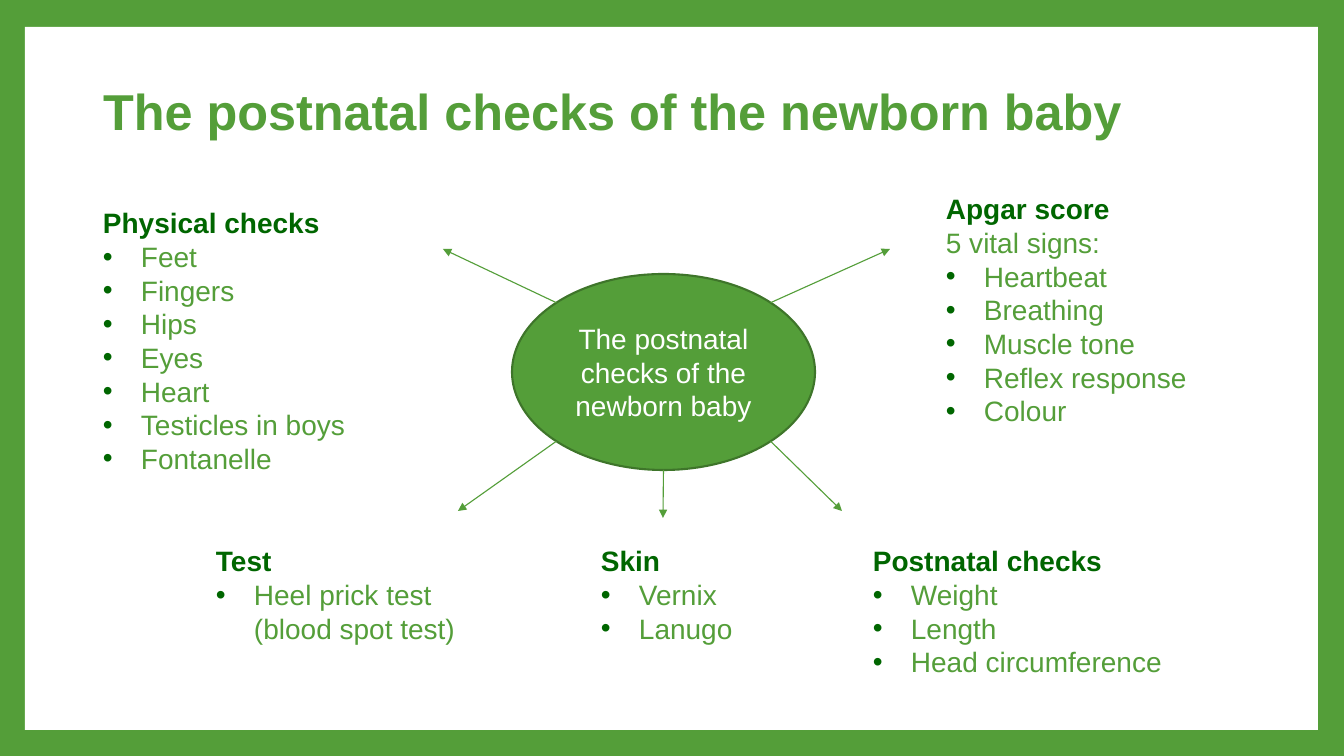
import pptx
import pptx.util
import pptx.dml.color
import pptx.enum.shapes
import pptx.enum.text
import pptx.oxml
import pptx.oxml.ns
import math

GREEN, DARK_GREEN, OUTLINE, WHITE = "549E39", "006600", "3E752A", "FFFFFF"
FONT = "Arial"
TOPIC = "The postnatal checks of the newborn baby"

# Content: heading, plain lines, bulleted lines, box (left, top, width, height) in px
GROUPS = [
    ("Apgar score", ["5 vital signs:"],
     ["Heartbeat", "Breathing", "Muscle tone", "Reflex response", "Colour"],
     (936, 187, 269, 248)),
    ("Skin", [], ["Vernix", "Lanugo"], (591, 539, 163, 146)),
    ("Postnatal checks", [], ["Weight", "Length", "Head circumference"],
     (863, 539, 342, 146)),
    ("Physical checks", [],
     ["Feet", "Fingers", "Hips", "Eyes", "Heart", "Testicles in boys", "Fontanelle"],
     (93, 201, 403, 281)),
    ("Test", [], ["Heel prick test (blood spot test)"], (206, 539, 276, 146)),
]
PANEL = (25, 27, 1293, 703)
TITLE = (93, 41, 1109, 146)
HUB = (512, 274, 303, 196)
# Angle on the hub's outline (degrees, clockwise from the right) and arrow tip
ARROWS = [(-45, (890, 249)), (45, (842, 511)), (-135, (443, 249)),
          (135, (458, 511)), (90, (663, 518))]
INDENT = 38


def px(length):
    return pptx.util.Emu(round(length * 914400 / 100.8))


def color(value):
    return pptx.dml.color.RGBColor.from_string(value)


def paint(shape, fill, line=None):
    shape.shadow.inherit = False
    shape.fill.solid()
    shape.fill.fore_color.rgb = color(fill)
    if line:
        shape.line.color.rgb = color(line)
        shape.line.width = pptx.util.Pt(1.5)
    else:
        shape.line.fill.background()


def style(para, size, value, bold=False):
    para.font.name = FONT
    para.font.size = pptx.util.Pt(size)
    para.font.bold = bold
    para.font.color.rgb = color(value)


def add_xml(parent, xml):
    namespace = pptx.oxml.ns.nsdecls("a")
    parent.append(pptx.oxml.parse_xml(xml.replace("/>", f" {namespace}/>", 1)
                                      if xml.count("<") == 1
                                      else xml.replace(">", f" {namespace}>", 1)))


def add_bullet(para):
    properties = para._p.get_or_add_pPr()
    properties.set("marL", str(px(INDENT)))
    properties.set("indent", str(-px(INDENT)))
    add_xml(properties, f'<a:buClr><a:srgbClr val="{DARK_GREEN}"/></a:buClr>')
    add_xml(properties, f'<a:buFont typeface="{FONT}"/>')
    add_xml(properties, '<a:buChar char="•"/>')


def add_group(page, heading, plain, bulleted, place):
    box = page.shapes.add_textbox(*map(px, place))
    frame = box.text_frame
    frame.word_wrap = True
    lines = [heading] + plain + bulleted
    for number, line in enumerate(lines):
        para = frame.paragraphs[0] if number == 0 else frame.add_paragraph()
        para.text = line
        if number > len(plain):
            add_bullet(para)
        style(para, 20, GREEN if number else DARK_GREEN, bold=number == 0)


def add_arrow(page, angle, tip):
    left, top, width, height = HUB
    turn = math.radians(angle)
    start = (left + width / 2 * (1 + math.cos(turn)),
             top + height / 2 * (1 + math.sin(turn)))
    arrow = page.shapes.add_connector(
        pptx.enum.shapes.MSO_CONNECTOR.STRAIGHT, *map(px, start + tip))
    arrow.line.color.rgb = color(GREEN)
    arrow.line.width = pptx.util.Pt(0.79)
    add_xml(arrow.line._get_or_add_ln(), '<a:tailEnd type="triangle"/>')
    add_xml(arrow._element.spPr, "<a:effectLst/>")


def main():
    deck = pptx.Presentation()
    deck.slide_width, deck.slide_height = px(1344), px(756)
    page = deck.slides.add_slide(deck.slide_layouts[5])
    shapes = pptx.enum.shapes.MSO_SHAPE

    # Green frame around a white panel
    page.background.fill.solid()
    page.background.fill.fore_color.rgb = color(GREEN)
    panel = page.shapes.add_shape(shapes.RECTANGLE, *map(px, PANEL))
    paint(panel, WHITE)
    page.shapes._spTree.insert(2, panel._element)

    # Title
    title = page.shapes.title
    title.left, title.top, title.width, title.height = map(px, TITLE)
    title.text_frame.text = TOPIC
    title.text_frame.auto_size = pptx.enum.text.MSO_AUTO_SIZE.NONE
    title.text_frame.vertical_anchor = pptx.enum.text.MSO_ANCHOR.MIDDLE
    para = title.text_frame.paragraphs[0]
    para.alignment = pptx.enum.text.PP_ALIGN.LEFT
    para.line_spacing = 0.9
    style(para, 36, GREEN, bold=True)

    # Central topic
    hub = page.shapes.add_shape(shapes.OVAL, *map(px, HUB))
    paint(hub, GREEN, OUTLINE)
    hub.text_frame.text = TOPIC
    hub.text_frame.word_wrap = True
    hub.text_frame.vertical_anchor = pptx.enum.text.MSO_ANCHOR.MIDDLE
    para = hub.text_frame.paragraphs[0]
    para.alignment = pptx.enum.text.PP_ALIGN.CENTER
    style(para, 20, WHITE)

    # Arrows and the checks they lead to
    for angle, tip in ARROWS:
        add_arrow(page, angle, tip)
    for group in GROUPS:
        add_group(page, *group)

    deck.save("out.pptx")


if __name__ == "__main__":
    main()
